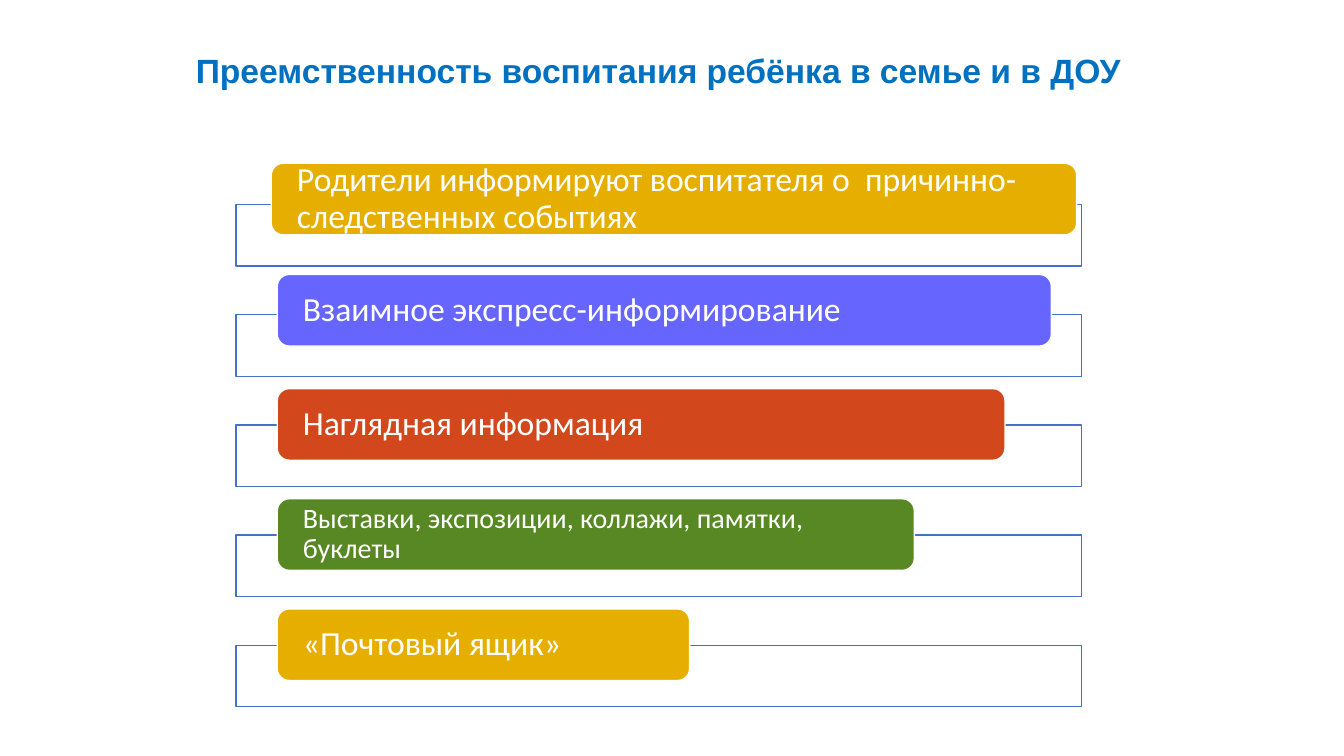
from dataclasses import dataclass

from lxml import etree
from pptx import Presentation
from pptx.dml.color import RGBColor
from pptx.enum.shapes import MSO_SHAPE
from pptx.enum.text import MSO_ANCHOR, MSO_AUTO_SIZE, PP_ALIGN
from pptx.oxml.ns import qn
from pptx.shapes.autoshape import Shape
from pptx.slide import Slide
from pptx.util import Inches, Pt

RECTANGLE, ROUNDED = MSO_SHAPE.RECTANGLE, MSO_SHAPE.ROUNDED_RECTANGLE
TOP, MIDDLE = MSO_ANCHOR.TOP, MSO_ANCHOR.MIDDLE
LEFT, CENTER = PP_ALIGN.LEFT, PP_ALIGN.CENTER
GROW = MSO_AUTO_SIZE.SHAPE_TO_FIT_TEXT

WHITE = RGBColor(0xFF, 0xFF, 0xFF)
TITLE_BLUE = RGBColor(0x00, 0x70, 0xC0)
FRAME_BLUE = RGBColor(0x44, 0x72, 0xC4)
GOLD = RGBColor(0xE6, 0xAF, 0x00)
VIOLET = RGBColor(0x66, 0x66, 0xFF)
RED = RGBColor(0xD2, 0x47, 0x1C)
GREEN = RGBColor(0x58, 0x88, 0x24)

SLIDE_WIDTH, SLIDE_HEIGHT = Inches(13.33), Inches(7.5)

# Percentages of the slide's width or height
TITLE_AREA = (13.73, 5.87, 70.5, 6.67)
FRAME_LEFT, FRAME_WIDTH, FRAME_HEIGHT = 17.55, 62.93, 8.13
FIRST_FRAME_TOP, ROW_PITCH = 27.07, 14.57
BAR_HEIGHT = 9.47


@dataclass(frozen=True)
class Bar:
    """A labelled bar; rise is how far it starts above its frame."""
    label: str
    color: RGBColor
    width: float
    left: float = 20.63
    rise: float = 4.8
    size: int = 24


BARS = (
    Bar("Родители информируют воспитателя о  причинно-следственных событиях",
        GOLD, 59.93, left=20.18, rise=5.47),
    Bar("Взаимное экспресс-информирование", VIOLET, 57.6, rise=5.33),
    Bar("Наглядная информация", RED, 54.15),
    Bar("Выставки, экспозиции, коллажи, памятки, буклеты", GREEN, 47.4, size=20),
    Bar("«Почтовый ящик»", GOLD, 30.68),
)


def to_lengths(left: float, top: float, width: float, height: float) -> tuple[int, ...]:
    """Turn percentages of the slide into lengths."""
    sides = (SLIDE_WIDTH, SLIDE_HEIGHT) * 2
    return tuple(round(side * share / 100)
                 for side, share in zip(sides, (left, top, width, height)))


def write_text(box: Shape, text: str, *, size: int, color: RGBColor, font: str,
               bold: bool = False, align: PP_ALIGN = LEFT,
               anchor: MSO_ANCHOR = MIDDLE, spacing: float = 1.0) -> None:
    frame = box.text_frame
    frame.word_wrap = True
    frame.vertical_anchor = anchor
    para = frame.paragraphs[0]
    para.alignment = align
    para.line_spacing = spacing
    span = para.add_run()
    span.text = text
    span.font.name = font
    span.font.size = Pt(size)
    span.font.bold = bold
    span.font.color.rgb = color


def add_panel(page: Slide, preset: MSO_SHAPE, area: tuple[float, ...],
              fill: RGBColor, line: RGBColor) -> Shape:
    panel = page.shapes.add_shape(preset, *to_lengths(*area))
    panel.shadow.inherit = False
    panel.fill.solid()
    panel.fill.fore_color.rgb = fill
    panel.line.color.rgb = line
    panel.line.width = Pt(1)
    return panel


def add_title(page: Slide) -> None:
    title = page.shapes.title
    title.left, title.top, title.width, title.height = to_lengths(*TITLE_AREA)
    write_text(title, "Преемственность воспитания ребёнка в семье и в ДОУ", size=24,
               color=TITLE_BLUE, font="Arial", bold=True, align=CENTER, anchor=TOP)
    title.text_frame.auto_size = GROW


def add_row(page: Slide, bar: Bar, row: int) -> None:
    top = FIRST_FRAME_TOP + row * ROW_PITCH
    frame = add_panel(page, RECTANGLE, (FRAME_LEFT, top, FRAME_WIDTH, FRAME_HEIGHT),
                      WHITE, FRAME_BLUE)
    fill_color = frame.fill._xPr.find(qn("a:solidFill"))[0]
    etree.SubElement(fill_color, qn("a:alpha")).set("val", "90000")

    panel = add_panel(page, ROUNDED, (bar.left, top - bar.rise, bar.width, BAR_HEIGHT),
                      bar.color, WHITE)
    text_frame = panel.text_frame
    text_frame.margin_left = text_frame.margin_right = Inches(0.22)
    text_frame.margin_top = text_frame.margin_bottom = 0
    write_text(panel, bar.label, size=bar.size, color=WHITE, font="Calibri", spacing=0.9)


def main() -> None:
    deck = Presentation()
    deck.slide_width, deck.slide_height = SLIDE_WIDTH, SLIDE_HEIGHT
    page = deck.slides.add_slide(deck.slide_layouts.get_by_name("Title Only"))
    add_title(page)
    for row, bar in enumerate(BARS):
        add_row(page, bar, row)
    deck.save("out.pptx")


if __name__ == "__main__":
    main()
